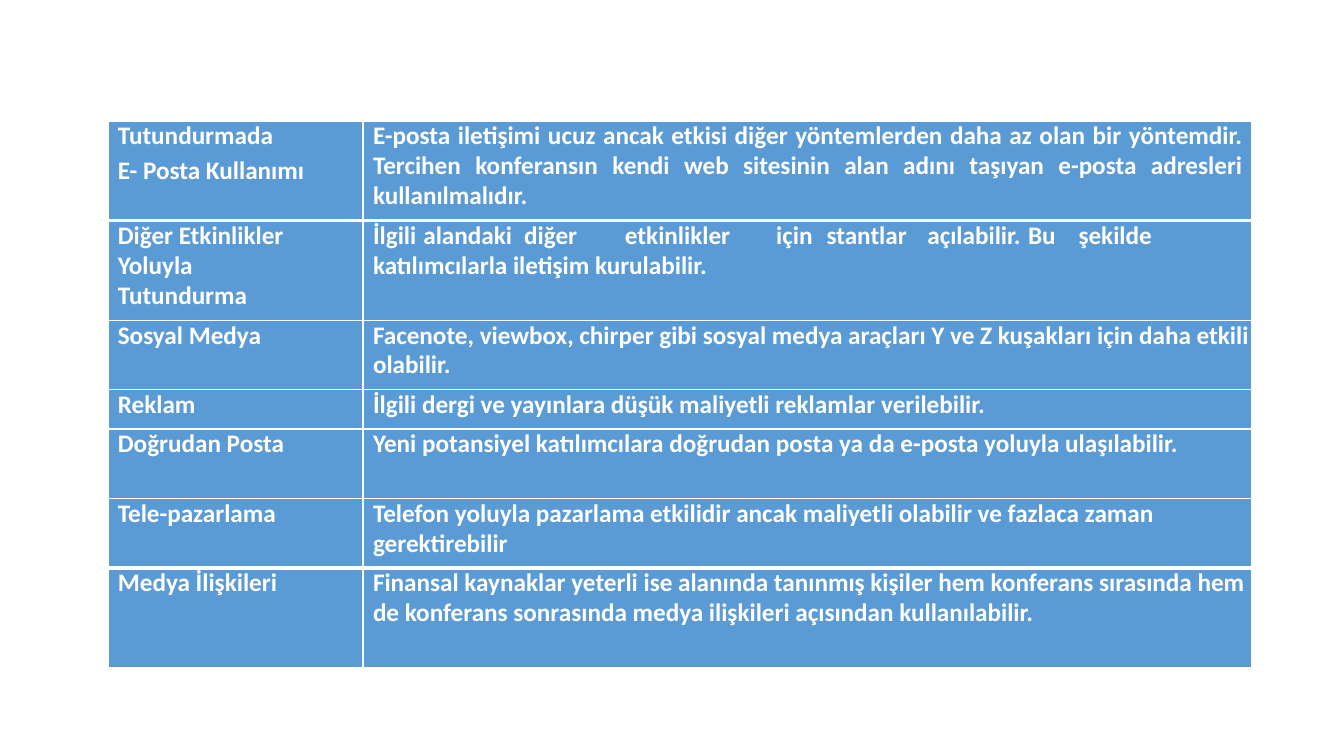
import pptx
import pptx.dml.color
import pptx.enum.text
import pptx.oxml.ns
import pptx.util
from lxml import etree

Cm = pptx.util.Cm
Pt = pptx.util.Pt
WHITE = "FFFFFF"
BLUE = "5B9BD5"

ROWS = [
    (2.51, "Tutundurmada\nE- Posta Kullanımı",
     "E-posta iletişimi ucuz ancak etkisi diğer yöntemlerden daha az olan bir yöntemdir. "
     "Tercihen konferansın kendi web sitesinin alan adını taşıyan e-posta adresleri "
     "kullanılmalıdır."),
    (2.51, "Diğer Etkinlikler Yoluyla Tutundurma",
     "İlgili\talandaki\tdiğer\tetkinlikler\tiçin\tstantlar\taçılabilir.\tBu\tşekilde "
     "katılımcılarla iletişim kurulabilir."),
    (1.75, "Sosyal Medya",
     "Facenote, viewbox, chirper gibi sosyal medya araçları Y ve Z kuşakları için daha "
     "etkili olabilir."),
    (0.99, "Reklam", "İlgili dergi ve yayınlara düşük maliyetli reklamlar verilebilir."),
    (1.75, "Doğrudan Posta",
     "Yeni potansiyel katılımcılara doğrudan posta ya da e-posta yoluyla ulaşılabilir."),
    (1.75, "Tele-pazarlama",
     "Telefon yoluyla pazarlama etkilidir ancak maliyetli olabilir ve fazlaca zaman "
     "gerektirebilir"),
    (2.51, "Medya İlişkileri",
     "Finansal kaynaklar yeterli ise alanında tanınmış kişiler hem konferans sırasında hem "
     "de konferans sonrasında medya ilişkileri açısından kullanılabilir."),
]
COLUMN_WIDTHS = [6.43, 22.38]
TAB_STOPS = [1.7, 4.27, 5.99, 8.97, 10.26, 12.62, 15.29, 16.36]
LAST = len(ROWS) - 1
# Edges drawn thicker than the rest: (row, side)
THICK_EDGES = {(0, "B"), (1, "T"), (LAST - 1, "B"), (LAST, "T")}


def color(value):
    return pptx.dml.color.RGBColor.from_string(value)


def add_element(parent, tag, **attributes):
    element = etree.SubElement(parent, pptx.oxml.ns.qn(tag))
    for name, value in attributes.items():
        element.set(name, str(value))
    return element


deck = pptx.Presentation()
deck.slide_width = Cm(33.87)
deck.slide_height = Cm(19.05)
page = deck.slides.add_slide(deck.slide_layouts[6])

frame = page.shapes.add_table(len(ROWS), 2, Cm(2.72), Cm(3.05),
                              Cm(sum(COLUMN_WIDTHS)), Cm(sum(row[0] for row in ROWS)))
table = frame.table
table.first_row = False
table.horz_banding = False
for column, width in zip(table.columns, COLUMN_WIDTHS):
    column.width = Cm(width)

for row_index, (height, *texts) in enumerate(ROWS):
    table.rows[row_index].height = Cm(height)
    for column_index, text in enumerate(texts):
        cell = table.cell(row_index, column_index)
        cell.margin_left = cell.margin_right = cell.margin_top = cell.margin_bottom = 0

        for side in "LRTB":
            weight = 3 if (row_index, side) in THICK_EDGES else 1
            line = add_element(cell._tc.get_or_add_tcPr(), "a:ln" + side, w=Pt(weight))
            add_element(add_element(line, "a:solidFill"), "a:srgbClr", val=WHITE)
        cell.fill.solid()
        cell.fill.fore_color.rgb = color(BLUE)

        cell.text_frame.text = text
        for para in cell.text_frame.paragraphs:
            properties = para._p.get_or_add_pPr()
            properties.set("marL", str(Cm(0.25)))
            properties.set("indent", "0")
            one_line_label = column_index == 0 and row_index > 1
            para.space_before = Pt(2.8 if one_line_label or text.startswith("İlgili dergi") else 3.1)
            if not one_line_label:
                para.line_spacing = 0.97
            for span in para.runs:
                span.font.name = "Calibri"
                span.font.size = Pt(18)
                span.font.bold = True
                span.font.color.rgb = color(WHITE)

for para in table.cell(0, 0).text_frame.paragraphs:
    para.line_spacing = Pt(21.8)

email_para = table.cell(0, 1).text_frame.paragraphs[0]
email_para.alignment = pptx.enum.text.PP_ALIGN.JUSTIFY
email_para._p.get_or_add_pPr().set("marR", str(Cm(0.2)))

events_label = table.cell(1, 0).text_frame.paragraphs[0]
events_label._p.get_or_add_pPr().set("marR", str(Cm(1.5)))

events_para = table.cell(1, 1).text_frame.paragraphs[0]
tab_list = add_element(events_para._p.get_or_add_pPr(), "a:tabLst")
for stop in TAB_STOPS:
    add_element(tab_list, "a:tab", pos=Cm(stop), algn="l")

deck.save("out.pptx")
